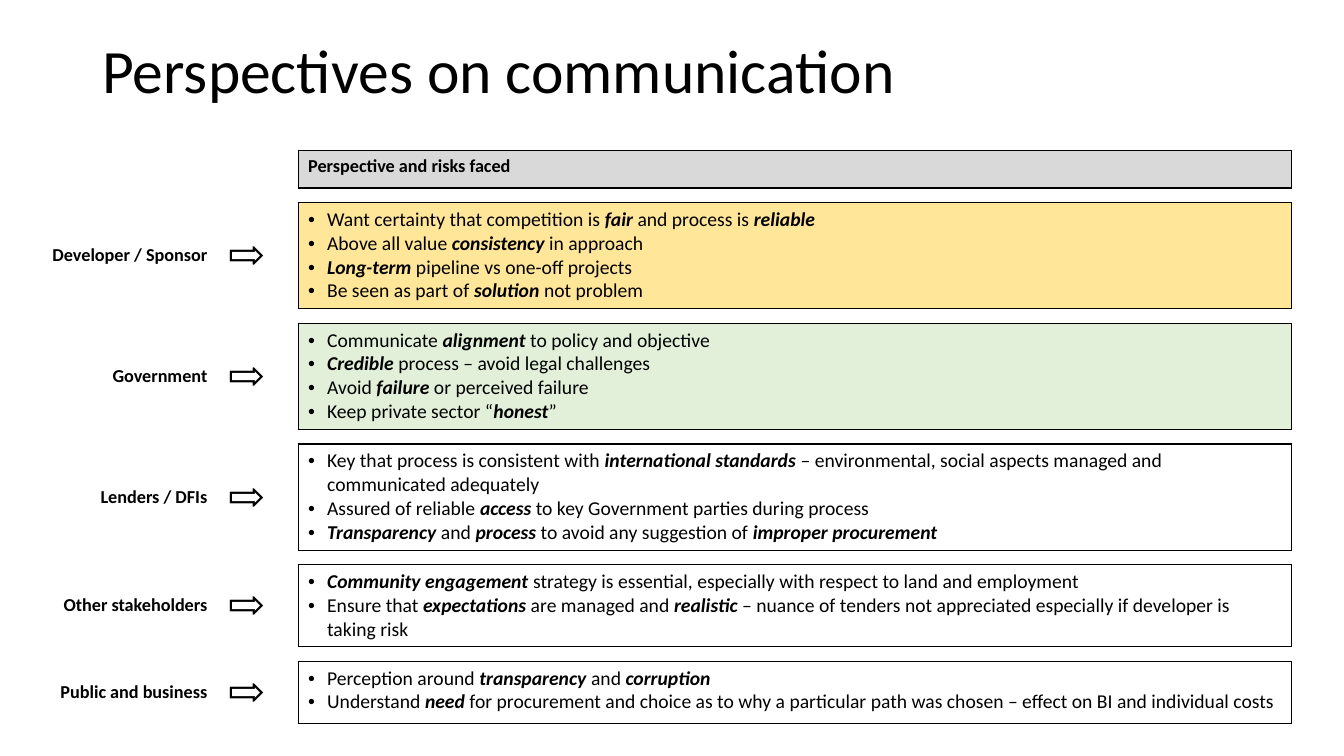
from lxml.etree import SubElement
from pptx import Presentation
from pptx.dml.color import RGBColor
from pptx.enum.text import MSO_ANCHOR, PP_ALIGN
from pptx.oxml.ns import qn
from pptx.util import Pt

PX = 9525
COLORS = {"ink": "000000", "header": "D9D9D9", "sponsor": "FFE699", "government": "E2F0D9"}
NO_STYLE = "{2D5ABB26-0587-4C30-8999-92F81FD0307C}"
COLUMNS = [202, 77, 946, 36]
HEADER_HEIGHT, GAP = 36, 14
INDENT = 18
BOX_COLUMN = 2
PERSPECTIVES = [
    ("Developer / Sponsor", "sponsor", 101, [
        "Want certainty that competition is *fair* and process is *reliable*",
        "Above all value *consistency* in approach",
        "*Long-term* pipeline vs one-off projects",
        "Be seen as part of *solution* not problem"]),
    ("Government", "government", 101, [
        "Communicate *alignment* to policy and objective",
        "*Credible* process – avoid legal challenges",
        "Avoid *failure* or perceived failure",
        "Keep private sector “*honest*”"]),
    ("Lenders / DFIs", None, 101, [
        "Key that process is consistent with *international standards* – environmental, "
        "social aspects managed and communicated adequately",
        "Assured of reliable *access* to key Government parties during process",
        "*Transparency* and *process* to avoid any suggestion of *improper procurement*"]),
    ("Other stakeholders", None, 78, [
        "*Community engagement* strategy is essential, especially with respect to land and employment",
        "Ensure that *expectations* are managed and *realistic* – nuance of tenders "
        "not appreciated especially if developer is taking risk"]),
    ("Public and business", None, 59, [
        "Perception around *transparency* and *corruption*",
        "Understand *need* for procurement and choice as to why a particular path "
        "was chosen – effect on BI and individual costs"]),
]


def write(tf, lines, size, font="Calibri", bold=False, align=PP_ALIGN.LEFT, bullet=False, spacing=None):
    """Write lines into a text frame; *starred* parts become bold italic."""
    for i, line in enumerate(lines):
        p = tf.add_paragraph() if i else tf.paragraphs[0]
        p.alignment = align
        if spacing:
            p.line_spacing = spacing
        if bullet:
            pPr = p._p.get_or_add_pPr()
            pPr.set("marL", str(INDENT * PX))
            pPr.set("indent", str(-INDENT * PX))
            SubElement(pPr, qn("a:buFont"), typeface="Arial")
            SubElement(pPr, qn("a:buChar"), char="•")
        for j, part in enumerate(line.split("*")):
            if part:
                r = p.add_run()
                r.text = part
                r.font.name = font
                r.font.size = Pt(size)
                r.font.bold = bold or j % 2 == 1
                r.font.italic = j % 2 == 1
                r.font.color.rgb = RGBColor.from_string(COLORS["ink"])


def add_title(slide, x, y, w, h):
    """Place the slide title in its box."""
    tf = slide.shapes.add_textbox(x * PX, y * PX, w * PX, h * PX).text_frame
    tf.word_wrap = True
    tf.vertical_anchor = MSO_ANCHOR.MIDDLE
    write(tf, ["Perspectives on communication"], 44, spacing=0.9)


def border_sides(row, col, last_row):
    """Return the sides of a cell that touch a framed box."""
    if row % 2:
        if col != BOX_COLUMN:
            return ""
        return "T" if row == last_row else "TB"
    return {BOX_COLUMN - 1: "R", BOX_COLUMN: "LRTB", BOX_COLUMN + 1: "L"}.get(col, "")


def draw_borders(cell, sides):
    """Draw a one point line on each given side of a cell."""
    tcPr = cell._tc.get_or_add_tcPr()
    for side in sides:
        ln = SubElement(tcPr, qn(f"a:ln{side}"), w=str(Pt(1)))
        SubElement(SubElement(ln, qn("a:solidFill")), qn("a:srgbClr"), val=COLORS["ink"])


def fill_cell(cell, color):
    """Fill a cell with a named colour, or leave it clear."""
    if color:
        cell.fill.solid()
        cell.fill.fore_color.rgb = RGBColor.from_string(COLORS[color])
    else:
        cell.fill.background()


def add_perspectives(slide, x, y):
    """Place the table of parties, arrows and framed perspective boxes."""
    heights = [HEADER_HEIGHT, GAP]
    for _, _, height, _ in PERSPECTIVES:
        heights += [height, GAP]
    frame = slide.shapes.add_table(len(heights), len(COLUMNS), x * PX, y * PX,
                                   sum(COLUMNS) * PX, sum(heights) * PX)
    table = frame.table
    table.first_row = table.horz_banding = False
    table._tbl.tblPr.find(qn("a:tableStyleId")).text = NO_STYLE
    for column, width in zip(table.columns, COLUMNS):
        column.width = width * PX
    fills = ["header"] + [color for _, color, _, _ in PERSPECTIVES]
    for i, height in enumerate(heights):
        table.rows[i].height = height * PX
        for j in range(len(COLUMNS)):
            cell = table.cell(i, j)
            draw_borders(cell, border_sides(i, j, len(heights) - 1))
            fill_cell(cell, fills[i // 2] if i % 2 == 0 and j == BOX_COLUMN else None)
            if i % 2 or j == 1:
                cell.margin_top = cell.margin_bottom = 0
            cell.text_frame.paragraphs[0]._p.get_or_add_endParaRPr().set("sz", "600")
    write(table.cell(0, BOX_COLUMN).text_frame, ["Perspective and risks faced"], 13, bold=True)
    for k, (party, _, _, points) in enumerate(PERSPECTIVES):
        label, arrow, box = (table.cell(2 * k + 2, j) for j in range(3))
        label.vertical_anchor = arrow.vertical_anchor = MSO_ANCHOR.MIDDLE
        write(label.text_frame, [party], 13, bold=True, align=PP_ALIGN.RIGHT)
        write(arrow.text_frame, ["⇨"], 32, font="Times New Roman")
        write(box.text_frame, points, 14, bullet=True)


def main():
    """Build the slide and save it."""
    prs = Presentation()
    prs.slide_width, prs.slide_height = 1280 * PX, 720 * PX
    slide = prs.slides.add_slide(prs.slide_layouts[6])
    add_perspectives(slide, 5, 143)
    add_title(slide, 88, 1, 1104, 139)
    prs.save("out.pptx")


if __name__ == "__main__":
    main()
